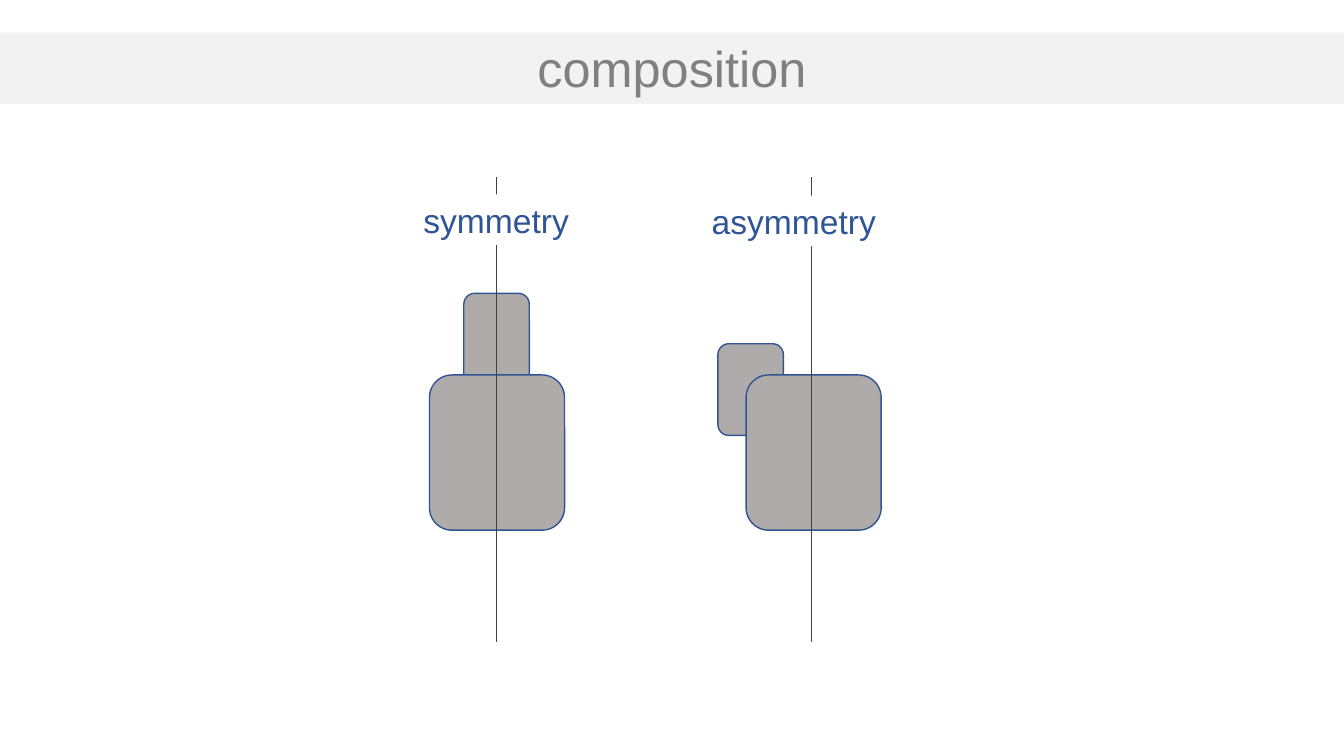
from dataclasses import dataclass

from pptx import Presentation
from pptx.dml.color import RGBColor as RGB
from pptx.enum.shapes import MSO_CONNECTOR as LINK, MSO_SHAPE as SHAPE
from pptx.enum.text import MSO_AUTO_SIZE as FIT, PP_ALIGN as ALIGN
from pptx.oxml.ns import qn
from pptx.util import Inches, Pt
from lxml.etree import SubElement


@dataclass(frozen=True)
class Theme:
    font: str = "Arial"
    title: int = 36
    label: int = 24
    white: RGB = RGB(0xFF, 0xFF, 0xFF)
    band: RGB = RGB(0xF2, 0xF2, 0xF2)
    gray: RGB = RGB(0x80, 0x80, 0x80)
    blue: RGB = RGB(0x2F, 0x55, 0x97)
    block: RGB = RGB(0xAF, 0xAB, 0xAB)
    edge: RGB = RGB(0x32, 0x54, 0x91)
    axis: RGB = RGB(0x40, 0x40, 0x40)


THEME = Theme()
WIDTH = 13.33
SMALL = (0.65, 0.91)
LARGE = (1.34, 1.54)
LARGE_TOP = 3.72


def add_block(slide, left, top, size):
    block = slide.shapes.add_shape(
        SHAPE.ROUNDED_RECTANGLE, *map(Inches, (left, top, *size)))
    block.shadow.inherit = False
    block.fill.solid()
    block.fill.fore_color.rgb = THEME.block
    block.line.color.rgb = THEME.edge
    block.line.width = Pt(1)


def add_axis(slide, x):
    axis = slide.shapes.add_connector(
        LINK.STRAIGHT, *map(Inches, (x, 1.76, x, 6.37)))
    axis.line.color.rgb = THEME.axis
    axis.line.width = Pt(0.5)
    SubElement(axis._element.spPr, qn("a:effectLst"))


def add_text(slide, box, text, size, color, fill, align=ALIGN.LEFT, wrap=False):
    area = slide.shapes.add_textbox(*map(Inches, box))
    area.fill.solid()
    area.fill.fore_color.rgb = fill
    frame = area.text_frame
    frame.word_wrap = wrap
    frame.auto_size = FIT.SHAPE_TO_FIT_TEXT
    par = frame.paragraphs[0]
    par.text = text
    par.alignment = align
    par.font.name = THEME.font
    par.font.size = Pt(size)
    par.font.color.rgb = color


def add_figure(slide, axis, small, large, label, box):
    """Two blocks, the small one behind, on an axis with its label."""
    add_block(slide, *small, SMALL)
    add_block(slide, large, LARGE_TOP, LARGE)
    add_axis(slide, axis)
    add_text(slide, box, label, THEME.label, THEME.blue, THEME.white)


def main():
    deck = Presentation()
    deck.slide_width = Inches(WIDTH)
    deck.slide_height = Inches(7.5)
    slide = deck.slides.add_slide(deck.slide_layouts[6])
    add_figure(slide, 4.92, (4.6, 2.91), 4.26,
               "symmetry", (4.1, 1.93, 1.9, 0.5))
    add_figure(slide, 8.05, (7.12, 3.41), 7.4,
               "asymmetry", (6.96, 1.94, 2.1, 0.5))
    add_text(slide, (0, 0.32, WIDTH, 0.71), "composition", THEME.title,
             THEME.gray, THEME.band, ALIGN.CENTER, True)
    deck.save("out.pptx")


if __name__ == "__main__":
    main()
